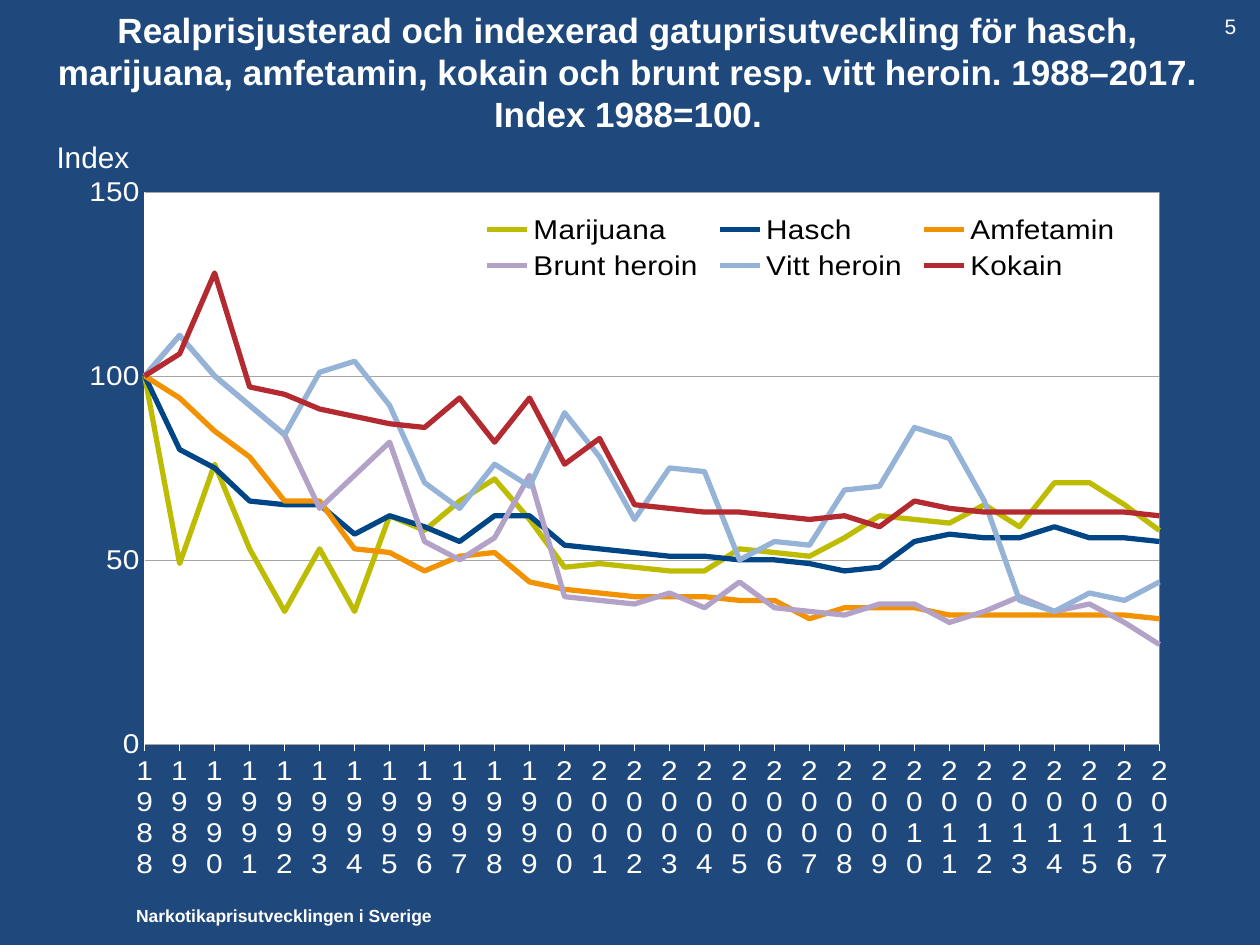
import pptx
import pptx.chart.data
import pptx.dml.color
import pptx.enum.chart
import pptx.enum.text
import pptx.oxml
import pptx.oxml.ns
import pptx.util
from dataclasses import dataclass

Inches, Pt = pptx.util.Inches, pptx.util.Pt
RGB = pptx.dml.color.RGBColor.from_string
qn = pptx.oxml.ns.qn


@dataclass(frozen=True)
class Theme:
    font: str = "Arial"
    background: str = "1F497D"
    light: str = "FFFFFF"
    dark: str = "000000"
    grid: str = "A6A6A6"
    title_size: float = 20
    chart_size: float = 17
    number_size: float = 12
    footer_size: float = 10


YEARS = [str(year) for year in range(1988, 2018)]
PRICES = {
    "Marijuana": ("BEBC00", [
        100, 49, 76, 53, 36, 53, 36, 62, 58, 66, 72, 61, 48, 49, 48,
        47, 47, 53, 52, 51, 56, 62, 61, 60, 65, 59, 71, 71, 65, 58]),
    "Hasch": ("004687", [
        100, 80, 75, 66, 65, 65, 57, 62, 59, 55, 62, 62, 54, 53, 52,
        51, 51, 50, 50, 49, 47, 48, 55, 57, 56, 56, 59, 56, 56, 55]),
    "Amfetamin": ("F29200", [
        100, 94, 85, 78, 66, 66, 53, 52, 47, 51, 52, 44, 42, 41, 40,
        40, 40, 39, 39, 34, 37, 37, 37, 35, 35, 35, 35, 35, 35, 34]),
    "Brunt heroin": ("B3A2C7", [
        100, 111, 100, 92, 84, 64, 73, 82, 55, 50, 56, 73, 40, 39, 38,
        41, 37, 44, 37, 36, 35, 38, 38, 33, 36, 40, 36, 38, 33, 27]),
    "Vitt heroin": ("95B3D7", [
        100, 111, 100, 92, 84, 101, 104, 92, 71, 64, 76, 70, 90, 78, 61,
        75, 74, 50, 55, 54, 69, 70, 86, 83, 66, 39, 36, 41, 39, 44]),
    "Kokain": ("B32B31", [
        100, 106, 128, 97, 95, 91, 89, 87, 86, 94, 82, 94, 76, 83, 65,
        64, 63, 63, 62, 61, 62, 59, 66, 64, 63, 63, 63, 63, 63, 62]),
}


def set_layout(element, x, y, w, h, inner=False):
    """Place a chart part by fractions of the chart's size."""
    target = '<c:layoutTarget val="inner"/>' if inner else ""
    layout = pptx.oxml.parse_xml(
        f'<c:layout {pptx.oxml.ns.nsdecls("c")}><c:manualLayout>{target}'
        '<c:xMode val="edge"/><c:yMode val="edge"/>'
        f'<c:x val="{x}"/><c:y val="{y}"/><c:w val="{w}"/><c:h val="{h}"/>'
        '</c:manualLayout></c:layout>')
    old = element.find(qn("c:layout"))
    if old is not None:
        element.remove(old)
    element.insert(0 if inner else 1, layout)


class Deck:
    def __init__(self, theme):
        self.theme = theme
        self.prs = pptx.Presentation()
        self.prs.slide_width, self.prs.slide_height = Inches(10), Inches(7.5)
        self.slide = None

    def add_slide(self):
        self.slide = self.prs.slides.add_slide(self.prs.slide_layouts[5])
        fill = self.slide.background.fill
        fill.solid()
        fill.fore_color.rgb = RGB(self.theme.background)

    def style_font(self, font, size, color=None, bold=False):
        font.name, font.size, font.bold = self.theme.font, Pt(size), bold
        font.color.rgb = RGB(color or self.theme.light)

    def style_line(self, line, color, width):
        line.color.rgb, line.width = RGB(color), Pt(width)

    def title(self, text, x, y, w, h):
        sp = self.slide.shapes.title
        sp.left, sp.top, sp.width, sp.height = map(Inches, (x, y, w, h))
        tf = sp.text_frame
        tf.text = text
        tf.auto_size = pptx.enum.text.MSO_AUTO_SIZE.NONE
        tf.vertical_anchor = pptx.enum.text.MSO_ANCHOR.MIDDLE
        p = tf.paragraphs[0]
        p.alignment = pptx.enum.text.PP_ALIGN.CENTER
        self.style_font(p.font, self.theme.title_size, bold=True)

    def text(self, text, x, y, w, h, size, bold=False, indent=0.1):
        tf = self.slide.shapes.add_textbox(*map(Inches, (x, y, w, h))).text_frame
        tf.word_wrap = True
        tf.margin_left, tf.margin_right = Inches(indent), 0
        tf.text = text
        self.style_font(tf.paragraphs[0].font, size, bold=bold)

    def line_chart(self, categories, series, x, y, w, h):
        theme = self.theme
        data = pptx.chart.data.CategoryChartData(number_format="0")
        data.categories = categories
        for name, (_, values) in series.items():
            data.add_series(name, values)
        chart = self.slide.shapes.add_chart(
            pptx.enum.chart.XL_CHART_TYPE.LINE, *map(Inches, (x, y, w, h)), data).chart
        chart.has_title = False
        self.style_font(chart.font, theme.chart_size)
        plot = chart.plots[0]
        plot.vary_by_categories = False
        for line, (color, _) in zip(plot.series, series.values()):
            line.smooth = False
            self.style_line(line.format.line, color, 3)
        self.axes(chart)
        self.legend(chart)
        area = chart._chartSpace.chart.plotArea
        set_layout(area, 0.076, 0.034, 0.903, 0.855, inner=True)
        area.append(pptx.oxml.parse_xml(
            f'<c:spPr {pptx.oxml.ns.nsdecls("c", "a")}><a:solidFill>'
            f'<a:srgbClr val="{theme.light}"/></a:solidFill></c:spPr>'))

    def axes(self, chart):
        theme, tick = self.theme, pptx.enum.chart.XL_TICK_MARK
        years, index = chart.category_axis, chart.value_axis
        for axis, mark, width in ((years, tick.OUTSIDE, 0.75), (index, tick.NONE, 0.25)):
            axis.major_tick_mark, axis.minor_tick_mark = mark, tick.NONE
            self.style_line(axis.format.line, theme.light, width)
            self.style_font(axis.tick_labels.font, theme.chart_size)
        body = years._element.find(qn("c:txPr")).find(qn("a:bodyPr"))
        body.set("rot", "0")
        body.set("vert", "horz")
        index.minimum_scale, index.maximum_scale, index.major_unit = 0, 150, 50
        index.tick_labels.number_format = "0"
        index.tick_labels.number_format_is_linked = False
        index.has_major_gridlines = True
        self.style_line(index.major_gridlines.format.line, theme.grid, 0.25)
        # Lines start on the value axis rather than half a category in
        cross = index._element.find(qn("c:crossBetween"))
        if cross is None:
            cross = pptx.oxml.parse_xml(
                f'<c:crossBetween {pptx.oxml.ns.nsdecls("c")} val="midCat"/>')
            index._element.find(qn("c:majorUnit")).addprevious(cross)
        cross.set("val", "midCat")

    def legend(self, chart):
        chart.has_legend = True
        chart.legend.position = pptx.enum.chart.XL_LEGEND_POSITION.TOP
        chart.legend.include_in_layout = False
        self.style_font(chart.legend.font, self.theme.chart_size, self.theme.dark)
        set_layout(chart.legend._element, 0.37, 0.06, 0.58, 0.12)


def main():
    theme = Theme()
    deck = Deck(theme)
    deck.add_slide()
    deck.text("Narkotikaprisutvecklingen i Sverige", 0.76, 7.13, 2.8, 0.27,
              theme.footer_size, bold=True, indent=0.32)
    deck.title("Realprisjusterad och indexerad gatuprisutveckling för hasch, "
               "marijuana, amfetamin, kokain och brunt resp. vitt heroin. "
               "1988–2017.\vIndex 1988=100.", 0.21, 0.07, 9.55, 1)
    deck.line_chart(YEARS, PRICES, 0.47, 1.35, 8.92, 5.63)
    deck.text("5", 9.53, 0.06, 0.45, 0.3, theme.number_size, indent=0.19)
    deck.text("Index", 0.35, 1.05, 1.02, 0.39, theme.chart_size)
    deck.prs.save("out.pptx")


if __name__ == "__main__":
    main()
